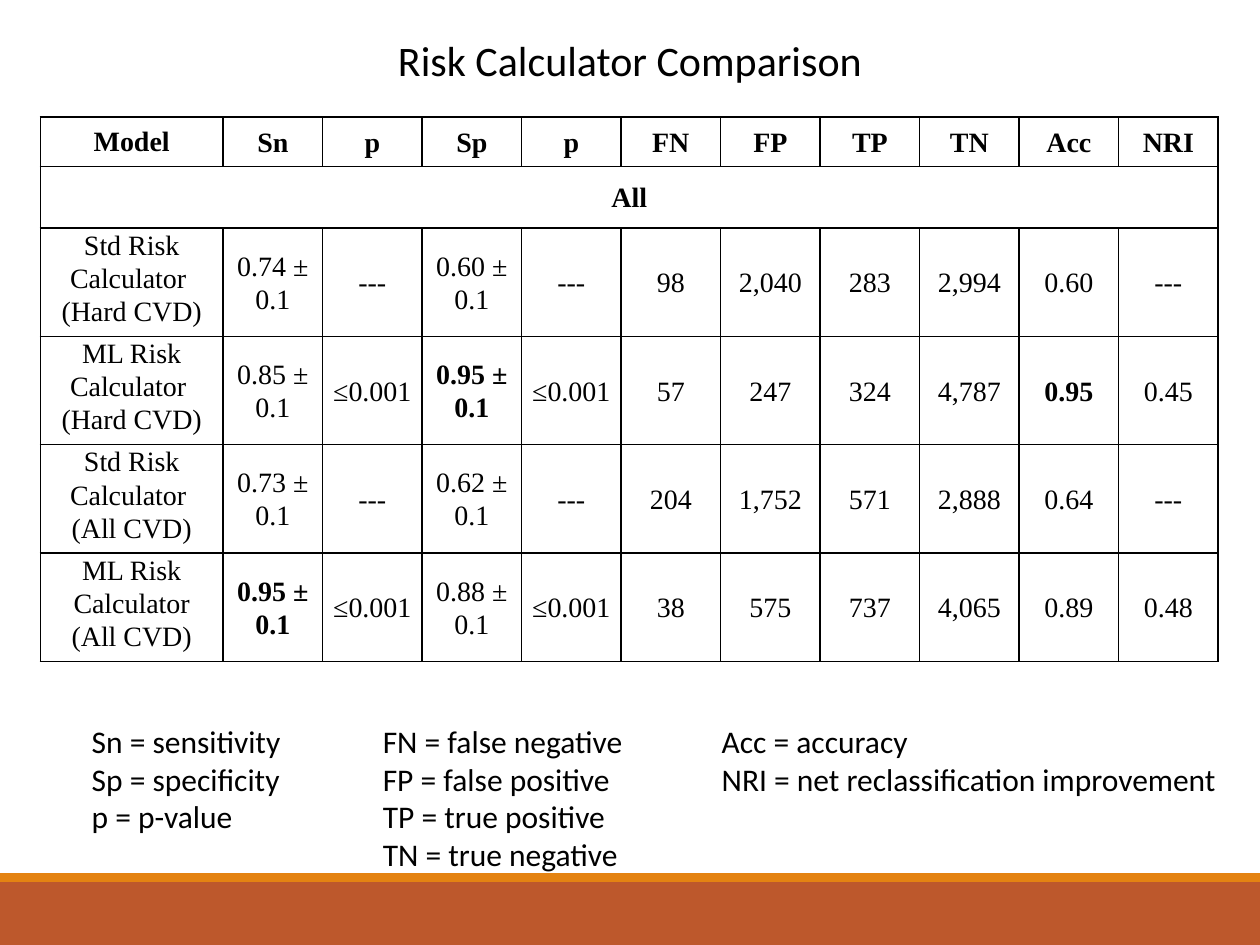
from dataclasses import dataclass

from lxml.etree import SubElement
from pptx import Presentation
from pptx.dml.color import RGBColor
from pptx.enum.shapes import MSO_SHAPE as Preset
from pptx.enum.text import MSO_ANCHOR as Anchor, PP_ALIGN as Align
from pptx.oxml.ns import qn
from pptx.util import Inches, Pt


@dataclass(frozen=True)
class Theme:
    ink: str = "000000"
    band: str = "BD582C"
    stripe: str = "E48312"
    sans: str = "Calibri"
    serif: str = "Times New Roman"
    title_size: int = 24
    table_size: int = 16
    legend_size: int = 18
    rule_width: int = 1
    line_spacing: float = 1.07


THEME = Theme()

HEADINGS = ["Model", "Sn", "p", "Sp", "p", "FN", "FP", "TP", "TN", "Acc", "NRI"]
GROUP = "All"
RESULTS = [
    ["Std Risk Calculator \n(Hard CVD)", "0.74 ± 0.1", "---", "0.60 ± 0.1", "---",
     "98", "2,040", "283", "2,994", "0.60", "---"],
    ["ML Risk Calculator \n(Hard CVD)", "0.85 ± 0.1", "≤0.001", "0.95 ± 0.1", "≤0.001",
     "57", "247", "324", "4,787", "0.95", "0.45"],
    ["Std Risk Calculator \n(All CVD)", "0.73 ± 0.1", "---", "0.62 ± 0.1", "---",
     "204", "1,752", "571", "2,888", "0.64", "---"],
    ["ML Risk Calculator\n(All CVD)", "0.95 ± 0.1", "≤0.001", "0.88 ± 0.1", "≤0.001",
     "38", "575", "737", "4,065", "0.89", "0.48"],
]
BEST_VALUE = "0.95"  # results that start with it are bold

# Left, width, height and lines of each abbreviation list
LEGENDS = [
    (0.63, 2.04, 1.31, ["Sn = sensitivity", "Sp = specificity", "p = p-value"]),
    (2.94, 2.44, 1.62, ["FN = false negative", "FP = false positive",
                        "TP = true positive", "TN = true negative"]),
    (5.63, 4.2, 1.01, ["Acc = accuracy", "NRI = net reclassification improvement"]),
]


def write_lines(frame, lines, font, size, align=Align.LEFT, bold=False, spacing=None):
    for index, line in enumerate(lines):
        paragraph = frame.paragraphs[0] if index == 0 else frame.add_paragraph()
        paragraph.alignment = align
        if spacing:
            paragraph.line_spacing = spacing
        run = paragraph.add_run()
        run.text = line
        run.font.name = font
        run.font.size = Pt(size)
        run.font.bold = bold
        run.font.color.rgb = RGBColor.from_string(THEME.ink)


def add_bar(slide, top, height, color):
    bar = slide.shapes.add_shape(
        Preset.RECTANGLE, 0, Inches(top), Inches(10), Inches(height))
    bar.shadow.inherit = False
    bar.fill.solid()
    bar.fill.fore_color.rgb = RGBColor.from_string(color)
    bar.line.fill.background()


def set_title(slide, text):
    title = slide.shapes.title
    title.left, title.top = Inches(0.32), Inches(0.22)
    title.width, title.height = Inches(9.36), Inches(0.5)
    title.text_frame.vertical_anchor = Anchor.TOP
    write_lines(title.text_frame, [text], THEME.sans, THEME.title_size, Align.CENTER)


def rule_cell(cell):
    properties = cell._tc.get_or_add_tcPr()
    for side in ("a:lnL", "a:lnR", "a:lnT", "a:lnB"):
        rule = SubElement(properties, qn(side), w=str(Pt(THEME.rule_width)))
        fill = SubElement(rule, qn("a:solidFill"))
        SubElement(fill, qn("a:srgbClr"), val=THEME.ink)


def fill_cell(cell, text, bold, anchor=Anchor.MIDDLE, spacing=THEME.line_spacing):
    cell.vertical_anchor = anchor
    write_lines(cell.text_frame, text.split("\n"), THEME.serif, THEME.table_size,
                Align.CENTER, bold, spacing)


def add_comparison(slide):
    widths = [1.45] + [0.79] * (len(HEADINGS) - 1)
    heights = [0.39, 0.49] + [0.86] * len(RESULTS)
    table = slide.shapes.add_table(
        len(heights), len(widths), Inches(0.32), Inches(0.93),
        Inches(sum(widths)), Inches(sum(heights))).table
    table.first_row = table.horz_banding = False
    for column, width in zip(table.columns, widths):
        column.width = Inches(width)
    for row, height in zip(table.rows, heights):
        row.height = Inches(height)
    for cell in table.iter_cells():
        cell.margin_left = cell.margin_right = Inches(0.03)
        cell.margin_top = cell.margin_bottom = 0
        rule_cell(cell)
        cell.fill.background()

    # Heading and group rows
    for col, heading in enumerate(HEADINGS):
        spacing = THEME.line_spacing if col else None
        fill_cell(table.cell(0, col), heading, True, spacing=spacing)
    table.cell(1, 0).merge(table.cell(1, len(widths) - 1))
    fill_cell(table.cell(1, 0), GROUP, True)

    # One row per risk calculator
    for row, result in enumerate(RESULTS, start=2):
        for col, value in enumerate(result):
            anchor = Anchor.MIDDLE if col else Anchor.TOP
            fill_cell(table.cell(row, col), value, value.startswith(BEST_VALUE), anchor)


def add_legend(slide, left, width, height, lines):
    legend = slide.shapes.add_textbox(
        Inches(left), Inches(5.68), Inches(width), Inches(height))
    legend.text_frame.word_wrap = True
    write_lines(legend.text_frame, lines, THEME.sans, THEME.legend_size)


def main():
    deck = Presentation()
    deck.slide_width, deck.slide_height = Inches(10), Inches(7.5)
    slide = deck.slides.add_slide(deck.slide_layouts[5])  # title only

    # Footer bars
    add_bar(slide, 7, 0.5, THEME.band)
    add_bar(slide, 6.93, 0.07, THEME.stripe)

    # Title, table and abbreviations
    set_title(slide, "Risk Calculator Comparison")
    add_comparison(slide)
    for legend in LEGENDS:
        add_legend(slide, *legend)

    deck.save("out.pptx")


if __name__ == "__main__":
    main()
